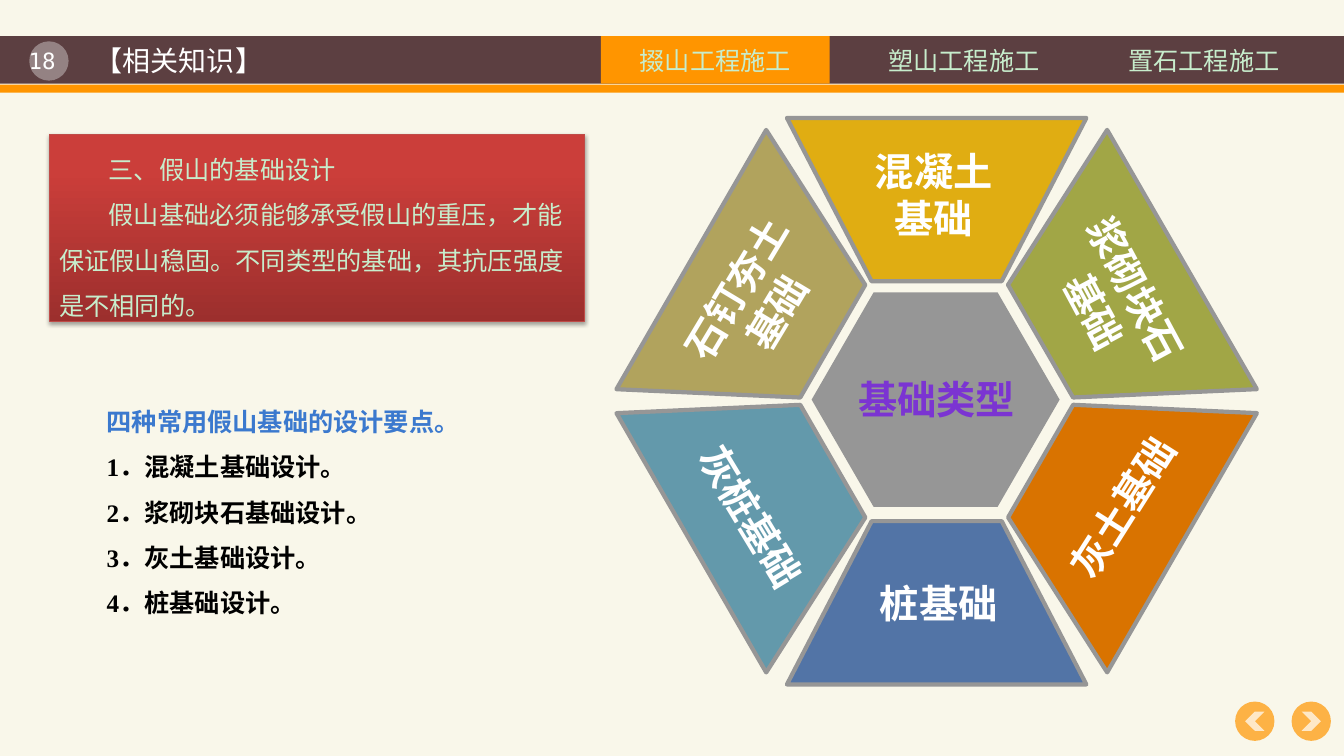
from math import cos, radians, sin

from lxml.etree import SubElement
from pptx import Presentation
from pptx.dml.color import RGBColor
from pptx.enum.shapes import MSO_SHAPE
from pptx.enum.text import MSO_ANCHOR, PP_ALIGN
from pptx.oxml import parse_xml
from pptx.oxml.ns import nsdecls, qn
from pptx.util import Inches, Pt

CREAM = RGBColor(0xF9, 0xF7, 0xEA)
BROWN = RGBColor(0x5C, 0x3F, 0x41)
ORANGE = RGBColor(0xFF, 0x95, 0x00)
WHITE = RGBColor(0xFF, 0xFF, 0xFF)
BLACK = RGBColor(0, 0, 0)
MINT = RGBColor(0xC7, 0xED, 0xCC)
GRAY = RGBColor(0x96, 0x96, 0x96)
PURPLE = RGBColor(0x7B, 0x34, 0xD2)
BLUE = RGBColor(0x3B, 0x79, 0xCE)
DARK_RED = RGBColor(0x9C, 0x2F, 0x2D)
RED = RGBColor(0xCB, 0x3E, 0x3A)
RED_EDGE = RGBColor(0xBF, 0x4C, 0x48)
GOLD = RGBColor(0xE0, 0xAD, 0x12)
GREEN = RGBColor(0xA1, 0xA6, 0x46)
AMBER = RGBColor(0xD9, 0x73, 0x00)
NAVY = RGBColor(0x52, 0x74, 0xA6)
TEAL = RGBColor(0x63, 0x99, 0xAB)
KHAKI = RGBColor(0xB1, 0xA3, 0x5D)

SANS, SERIF, MONO = "Noto Sans CJK SC", "Times New Roman", "DejaVu Sans Mono"

HEADING = "【相关知识】"
PAGE_NUMBER = "18 "
TABS = [
    ("掇山工程施工", 5.96, 2.27, ORANGE),
    ("塑山工程施工", 8.39, 2.34, None),
    ("置石工程施工", 10.73, 2.42, None),
]
INTRO = [
    "三、假山的基础设计",
    "假山基础必须能够承受假山的重压，才能保证假山稳固。不同类型的基础，其抗压强度是不相同的。",
]
KEY_POINTS = [
    "四种常用假山基础的设计要点。",
    "1．混凝土基础设计。",
    "2．浆砌块石基础设计。",
    "3．灰土基础设计。",
    "4．桩基础设计。",
]
HUB_LABEL = "基础类型"
PETALS = [
    ("混凝土\n基础", GOLD, (9.26, 1.93), 0),
    ("浆砌块石\n基础", GREEN, (11.06, 2.98), 61.8),
    ("灰土基础", AMBER, (11.13, 5.03), 302.4),
    ("桩基础", NAVY, (9.31, 5.98), 0),
    ("灰桩基础", TEAL, (7.45, 5.12), 58.8),
    ("石钉夯土\n基础", KHAKI, (7.5, 2.98), 301),
]
HUB_X, HUB_Y, RING_RADIUS = 9.29, 3.98, 2
PETAL_W, PETAL_H = 2.97, 1.62
PETAL_OUTLINE = [(0, 0), (0.84, PETAL_H), (2.13, PETAL_H), (PETAL_W, 0)]

prs = Presentation()
prs.slide_width, prs.slide_height = Inches(13.33), Inches(7.5)
slide = prs.slides.add_slide(prs.slide_layouts[5])
slide.background.fill.solid()
slide.background.fill.fore_color.rgb = CREAM
shapes = slide.shapes


def paint(shape, color, opacity=100):
    shape.shadow.inherit = False
    shape.fill.solid()
    shape.fill.fore_color.rgb = color
    if opacity < 100:
        rgb = shape.fill._xPr.find(qn("a:solidFill"))[0]
        SubElement(rgb, qn("a:alpha"), val=str(opacity * 1000))
    shape.line.fill.background()


def add_shape(preset, box, color, opacity=100):
    shape = shapes.add_shape(preset, *map(Inches, box))
    paint(shape, color, opacity)
    return shape


def add_textbox(box):
    return shapes.add_textbox(*map(Inches, box))


def write(shape, lines, size, color, font=SERIF, bold=False,
          align=PP_ALIGN.LEFT, anchor=MSO_ANCHOR.TOP, wrap=True, spacing=None):
    frame = shape.text_frame
    frame.word_wrap = wrap
    frame.vertical_anchor = anchor
    for i, line in enumerate(lines):
        paragraph = frame.add_paragraph() if i else frame.paragraphs[0]
        paragraph.text = line
        paragraph.alignment = align
        if spacing:
            paragraph.line_spacing = spacing
        paragraph.font.size = Pt(size)
        paragraph.font.bold = bold
        paragraph.font.color.rgb = color
        paragraph.font.name = font
        defaults = paragraph._p.pPr.find(qn("a:defRPr"))
        SubElement(defaults, qn("a:ea"), typeface=SANS)
    return frame.paragraphs


def add_label(text, center, color, rotation=0):
    rows = text.split("\n")
    width = 0.21 + 0.39 * max(map(len, rows))
    height = 0.1 + 0.47 * len(rows)
    label = add_textbox((center[0] - width / 2, center[1] - height / 2, width, height))
    label.rotation = rotation
    write(label, [text], 28, color, bold=True, align=PP_ALIGN.CENTER, wrap=False)


add_shape(MSO_SHAPE.RECTANGLE, (0, 0.36, 13.33, 0.47), BROWN)
add_shape(MSO_SHAPE.RECTANGLE, (0, 0.84, 13.33, 0.08), ORANGE)
add_shape(MSO_SHAPE.OVAL, (0.29, 0.41, 0.39, 0.39), WHITE, 35)
write(add_textbox((0.13, 0.42, 0.71, 0.37)), [PAGE_NUMBER], 16, WHITE, MONO,
      align=PP_ALIGN.CENTER)

for left, rotation in [(12.25, 180), (12.81, 0)]:
    add_shape(MSO_SHAPE.OVAL, (left, 6.96, 0.39, 0.39), ORANGE, 70)
    chevron = add_shape(MSO_SHAPE.CHEVRON, (left + 0.1, 7.06, 0.19, 0.19), WHITE, 70)
    chevron.rotation = rotation

for name, left, width, color in TABS:
    box = (left, 0.36, width, 0.47)
    tab = add_shape(MSO_SHAPE.RECTANGLE, box, color) if color else add_textbox(box)
    write(tab, [name], 18, MINT, SANS, align=PP_ALIGN.CENTER, anchor=MSO_ANCHOR.MIDDLE)

title = shapes.title
title.left, title.top, title.width, title.height = map(Inches, (0.84, 0.38, 5.59, 0.44))
write(title, [HEADING], 20, WHITE, SANS, anchor=MSO_ANCHOR.MIDDLE)
shapes._spTree.append(title._element)

intro = add_shape(MSO_SHAPE.RECTANGLE, (0.49, 1.33, 5.31, 1.86), RED)
intro.fill.gradient()
intro.fill.gradient_angle = 90
for stop, color, position in zip(intro.fill.gradient_stops, (DARK_RED, RED), (0, 0.8)):
    stop.color.rgb = color
    stop.position = position
intro.line.color.rgb = RED_EDGE
intro.line.width = Pt(0.75)
intro._element.spPr.find(qn("a:effectLst")).append(parse_xml(
    f'<a:outerShdw {nsdecls("a")} blurRad="{Pt(3.1)}" dist="{Pt(1.8)}" dir="5400000" '
    'rotWithShape="0"><a:srgbClr val="000000"><a:alpha val="35000"/></a:srgbClr>'
    '</a:outerShdw>'))
for paragraph in write(intro, INTRO, 18, MINT, spacing=1.5):
    paragraph._p.pPr.set("indent", str(Inches(0.49)))

hub = add_shape(MSO_SHAPE.HEXAGON, (8.05, 2.9, 2.46, 2.13), GRAY)
hub.adjustments[0] = 0.289

for i, (text, color, center, rotation) in enumerate(PETALS):
    angle = 60 * i
    left = HUB_X + RING_RADIUS * sin(radians(angle)) - PETAL_W / 2
    top = HUB_Y - RING_RADIUS * cos(radians(angle)) - PETAL_H / 2
    corners = [(Inches(left + x), Inches(top + y)) for x, y in PETAL_OUTLINE]
    outline = shapes.build_freeform(*corners[0])
    outline.add_line_segments(corners[1:], close=True)
    petal = outline.convert_to_shape()
    petal.rotation = angle
    paint(petal, color)
    petal.line.color.rgb = GRAY
    petal.line.width = Pt(3)

add_label(HUB_LABEL, (9.29, 3.96), PURPLE)
for text, color, center, rotation in PETALS:
    add_label(text, center, WHITE, rotation)

points = write(add_textbox((0.96, 3.83, 6.67, 2.37)), KEY_POINTS, 18, BLACK,
               bold=True, spacing=1.5)
points[0].font.color.rgb = BLUE

prs.save("out.pptx")
